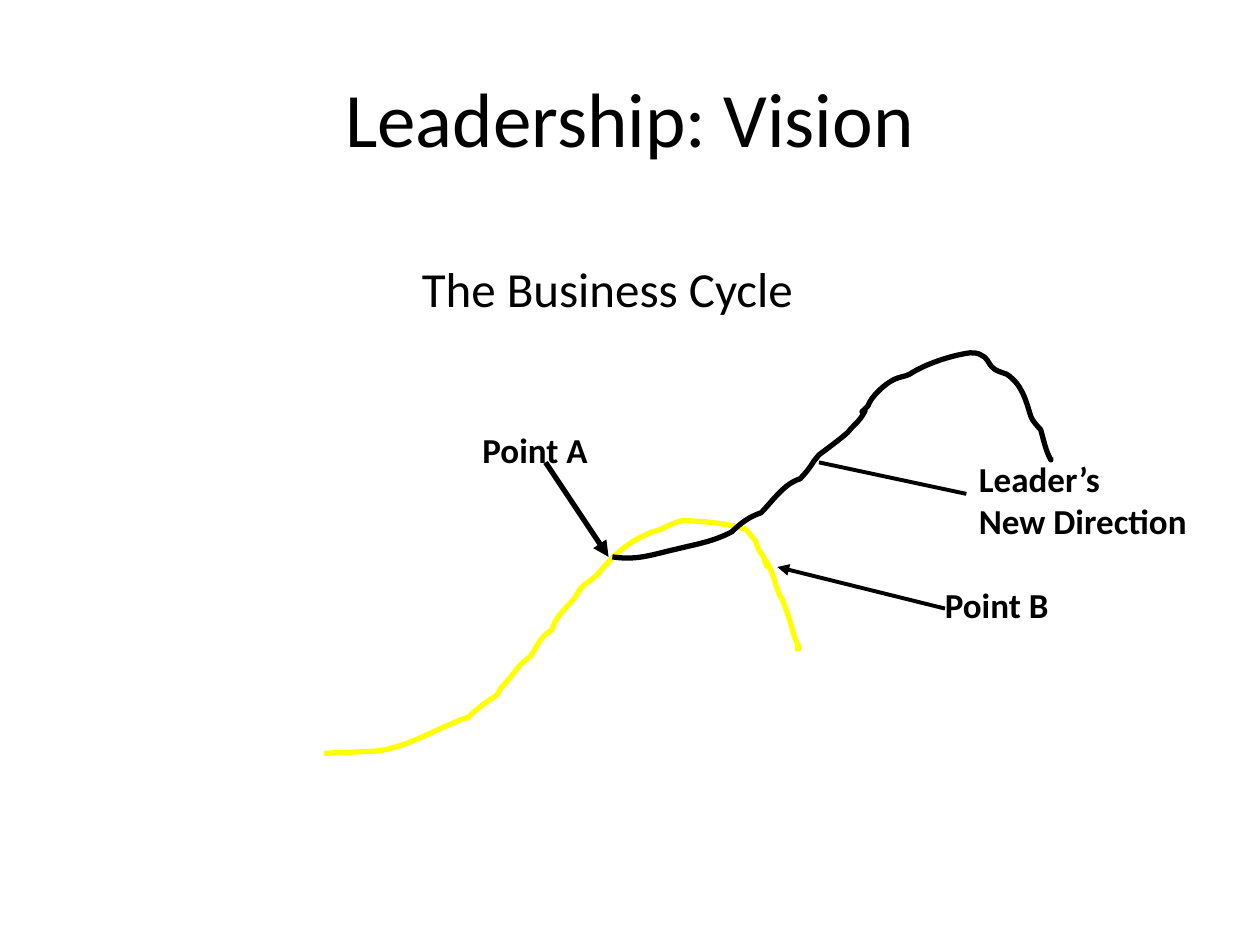
from dataclasses import dataclass
from lxml.etree import SubElement
from pptx import Presentation
from pptx.dml.color import RGBColor
from pptx.enum.shapes import MSO_CONNECTOR
from pptx.enum.text import MSO_ANCHOR, MSO_AUTO_SIZE, PP_ALIGN
from pptx.oxml.ns import qn
from pptx.util import Inches, Pt

COLORS = {"ink": "000000", "cycle": "FFFF00"}
Point = tuple[float, float]


@dataclass
class Label:
    lines: list[str]
    left: float
    top: float
    width: float
    height: float
    size: int = 20
    bold: bool = True
    title: bool = False


@dataclass
class Pointer:
    start: Point
    end: Point
    weight: float = 2.25
    arrow: bool = True


@dataclass
class Curve:
    color: str
    start: Point
    bends: list[tuple[float, ...]]


LABELS = [
    Label(["Leadership: Vision"], 0.5, 0.3, 9, 1.25, 44, False, True),
    Label(["Point A"], 3.73, 3.35, 1.05, 0.44),
    Label(["Point B"], 7.4, 4.58, 1.04, 0.44),
    Label(["The Business Cycle"], 3.25, 2, 3.24, 0.57, 28, False),
    Label(["Leader’s", "New Direction"], 7.67, 3.58, 1.91, 0.77),
]

POINTERS = [
    Pointer((4.33, 3.67), (4.83, 4.42), 3),
    Pointer((6.5, 3.67), (7.67, 3.92), arrow=False),
    Pointer((7.5, 4.83), (6.17, 4.5)),
]

CURVES = [
    Curve("cycle", (2.57, 5.98), [
        (2.71, 5.97, 2.85, 5.97, 2.99, 5.96),
        (3.25, 5.93, 3.48, 5.77, 3.72, 5.69),
        (3.79, 5.62, 3.86, 5.57, 3.94, 5.52),
        (4.03, 5.38, 3.91, 5.54, 4.03, 5.4),
        (4.09, 5.33, 4.13, 5.26, 4.21, 5.21),
        (4.27, 5.12, 4.29, 5.05, 4.38, 5),
        (4.41, 4.9, 4.46, 4.86, 4.53, 4.78),
        (4.57, 4.75, 4.58, 4.7, 4.61, 4.67),
        (4.65, 4.62, 4.71, 4.6, 4.75, 4.55),
        (4.89, 4.38, 5.03, 4.26, 5.25, 4.2),
        (5.27, 4.19, 5.28, 4.18, 5.31, 4.17),
        (5.34, 4.15, 5.42, 4.13, 5.42, 4.13),
        (5.59, 4.14, 5.76, 4.15, 5.92, 4.2),
        (5.95, 4.24, 5.98, 4.27, 6, 4.3),
        (6.01, 4.32, 6.01, 4.34, 6.02, 4.36),
        (6.03, 4.38, 6.05, 4.4, 6.06, 4.42),
        (6.13, 4.63, 6.02, 4.31, 6.12, 4.53),
        (6.16, 4.62, 6.16, 4.69, 6.21, 4.76),
        (6.24, 4.84, 6.27, 4.92, 6.29, 5),
        (6.33, 5.16, 6.38, 5.15, 6.31, 5.15),
    ]),
    Curve("ink", (4.86, 4.42), [
        (5.06, 4.45, 5.18, 4.4, 5.36, 4.36),
        (5.52, 4.32, 5.66, 4.3, 5.81, 4.22),
        (5.88, 4.15, 5.95, 4.1, 6.04, 4.07),
        (6.13, 3.98, 6.22, 3.84, 6.35, 3.8),
        (6.39, 3.76, 6.43, 3.71, 6.46, 3.66),
        (6.48, 3.65, 6.48, 3.62, 6.5, 3.61),
        (6.54, 3.58, 6.69, 3.47, 6.73, 3.43),
        (6.76, 3.39, 6.8, 3.36, 6.83, 3.32),
        (6.94, 3.16, 6.76, 3.35, 6.89, 3.22),
        (6.91, 3.15, 7.03, 3.04, 7.1, 3.01),
        (7.14, 2.99, 7.18, 2.99, 7.22, 2.97),
        (7.34, 2.89, 7.55, 2.82, 7.7, 2.8),
        (7.73, 2.8, 7.76, 2.8, 7.79, 2.82),
        (7.83, 2.83, 7.85, 2.89, 7.87, 2.91),
        (7.91, 2.95, 7.94, 2.95, 7.99, 2.97),
        (8.11, 3.05, 8.14, 3.17, 8.18, 3.3),
        (8.19, 3.34, 8.26, 3.41, 8.26, 3.41),
        (8.28, 3.48, 8.3, 3.58, 8.34, 3.65),
        (8.34, 3.65, 8.34, 3.63, 8.34, 3.63),
    ]),
]


def tint(name: str) -> RGBColor:
    return RGBColor.from_string(COLORS[name])


def add_curve(slide, curve: Curve) -> None:
    spots = [(Inches(x), Inches(y)) for bend in curve.bends
             for x, y in zip(bend[::2], bend[1::2])]
    pen = slide.shapes.build_freeform(*map(Inches, curve.start))
    pen.add_line_segments(spots, close=False)
    shape = pen.convert_to_shape()
    shape.shadow.inherit = False
    shape.fill.background()
    shape.line.color.rgb = tint(curve.color)
    shape.line.width = Pt(3)
    route = shape.element.xpath(".//a:path")[0]
    steps = route.findall(qn("a:lnTo"))
    for first in range(0, len(steps), 3):
        bend = SubElement(route, qn("a:cubicBezTo"))
        for step in steps[first:first + 3]:
            bend.append(step[0])
            route.remove(step)


def add_pointer(slide, pointer: Pointer) -> None:
    ends = map(Inches, pointer.start + pointer.end)
    line = slide.shapes.add_connector(MSO_CONNECTOR.STRAIGHT, *ends)
    line.line.color.rgb = tint("ink")
    line.line.width = Pt(pointer.weight)
    if pointer.arrow:
        SubElement(line.line._get_or_add_ln(), qn("a:tailEnd"), type="triangle")
    SubElement(line.element.spPr, qn("a:effectLst"))


def add_label(slide, label: Label) -> None:
    area = map(Inches, (label.left, label.top, label.width, label.height))
    frame = slide.shapes.add_textbox(*area).text_frame
    frame.word_wrap = label.title
    if label.title:
        frame.vertical_anchor = MSO_ANCHOR.MIDDLE
    else:
        frame.auto_size = MSO_AUTO_SIZE.SHAPE_TO_FIT_TEXT
    frame.text = "\n".join(label.lines)
    for para in frame.paragraphs:
        para.alignment = PP_ALIGN.CENTER if label.title else PP_ALIGN.LEFT
        para.font.name = "Calibri"
        para.font.size = Pt(label.size)
        para.font.bold = label.bold
        para.font.color.rgb = tint("ink")


def main() -> None:
    deck = Presentation()
    deck.slide_width, deck.slide_height = Inches(10), Inches(7.5)
    slide = deck.slides.add_slide(deck.slide_layouts[6])
    for curve in CURVES:
        add_curve(slide, curve)
    for pointer in POINTERS:
        add_pointer(slide, pointer)
    for label in LABELS:
        add_label(slide, label)
    deck.save("out.pptx")


if __name__ == "__main__":
    main()
